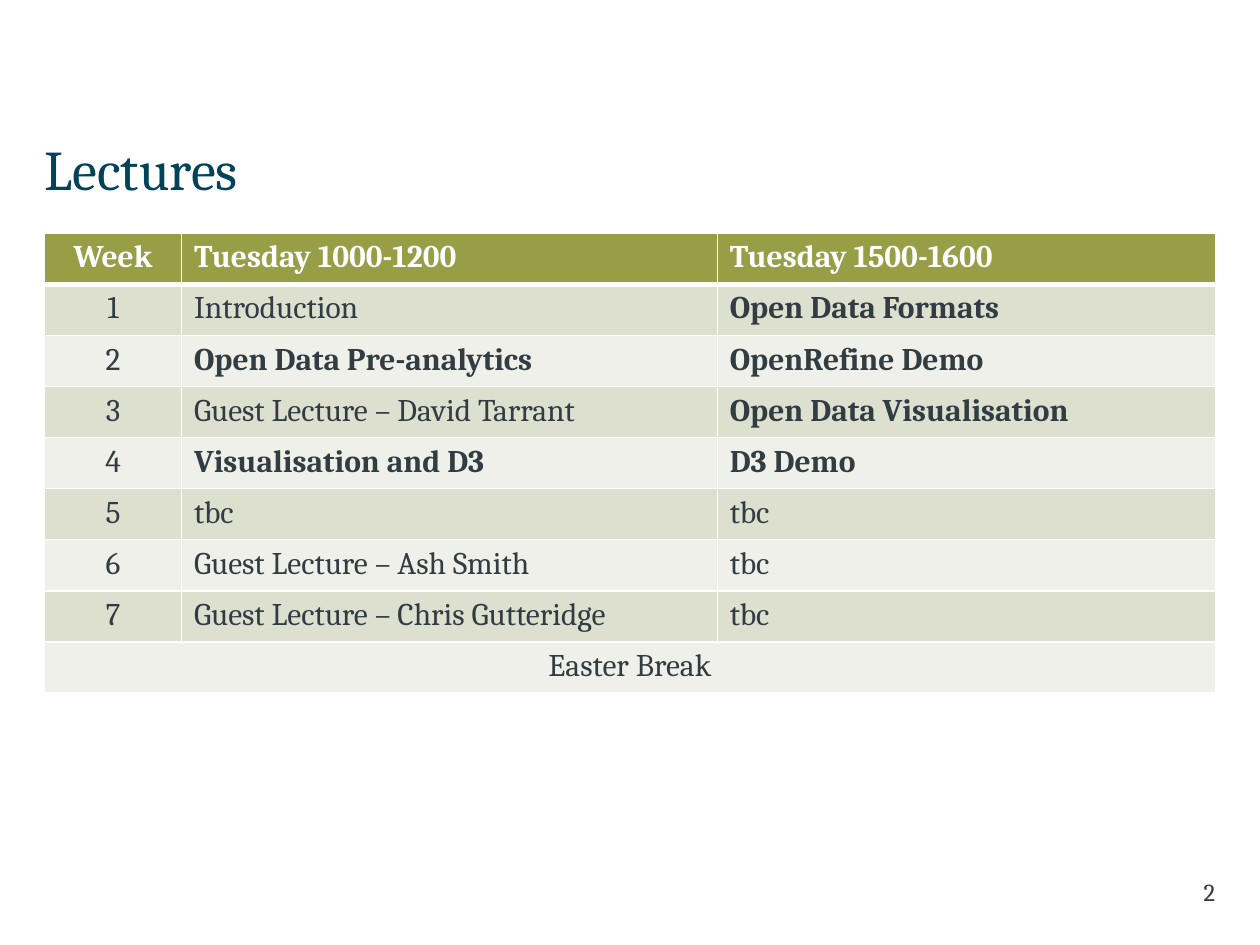
from lxml import etree
from pptx import Presentation
from pptx import util as u
from pptx.dml.color import RGBColor
from pptx.enum import text
from pptx.oxml.ns import qn

TITLE = "Lectures"
PAGE = "2"
HEADER = ("Week", "Tuesday 1000-1200", "Tuesday 1500-1600")
LECTURES = [
    ("Introduction", "Open Data Formats"),
    ("Open Data Pre-analytics", "OpenRefine Demo"),
    ("Guest Lecture – David Tarrant", "Open Data Visualisation"),
    ("Visualisation and D3", "D3 Demo"),
    ("tbc", "tbc"),
    ("Guest Lecture – Ash Smith", "tbc"),
    ("Guest Lecture – Chris Gutteridge", "tbc"),
]
BREAK = "Easter Break"
BOLD = {
    "Open Data Formats", "Open Data Pre-analytics", "OpenRefine Demo",
    "Open Data Visualisation", "Visualisation and D3", "D3 Demo",
}

FONT = "Cambria"
NAVY = RGBColor(0x01, 0x43, 0x59)
SLATE = RGBColor(0x32, 0x3D, 0x43)
WHITE = RGBColor(0xFF, 0xFF, 0xFF)
OLIVE = RGBColor(0x97, 0x9E, 0x45)
BANDS = (RGBColor(0xEF, 0xF0, 0xE9), RGBColor(0xDD, 0xDF, 0xCF))

LEFT, TOP = 0.9, 4.7
COLUMNS = (2.76, 10.8, 10.04)
WIDTH = sum(COLUMNS)
ROW = 1.03
ALIGN = text.PP_ALIGN


def write(tf, words, size=18, color=SLATE, bold=False, align=ALIGN.LEFT):
    p = tf.paragraphs[0]
    p.alignment = align
    r = p.add_run()
    r.text = words
    r.font.name = FONT
    r.font.size = u.Pt(size)
    r.font.bold = bold
    r.font.color.rgb = color


def add_text(s, words, left, top, width, height, inset_left=0, inset_right=0, **style):
    tf = s.shapes.add_textbox(*map(u.Cm, (left, top, width, height))).text_frame
    tf.word_wrap = True
    tf.vertical_anchor = text.MSO_ANCHOR.MIDDLE
    tf.margin_left, tf.margin_right = u.Cm(inset_left), u.Cm(inset_right)
    write(tf, words, **style)


def set_borders(cell, **widths):
    tcPr = cell._tc.get_or_add_tcPr()
    for side in "LRTB":
        ln = etree.SubElement(tcPr, qn(f"a:ln{side}"), w=str(u.Pt(widths.get(side, 1))))
        fill = etree.SubElement(ln, qn("a:solidFill"))
        etree.SubElement(fill, qn("a:srgbClr"), val=str(WHITE))


def add_schedule(s):
    rows = [HEADER]
    rows += [(str(week), *pair) for week, pair in enumerate(LECTURES, 1)]
    rows.append((BREAK, "", ""))
    table = s.shapes.add_table(
        len(rows), len(COLUMNS), u.Cm(LEFT), u.Cm(TOP), u.Cm(WIDTH), u.Cm(ROW * len(rows))
    ).table
    for column, width in zip(table.columns, COLUMNS):
        column.width = u.Cm(width)
    for i, row in enumerate(rows):
        table.rows[i].height = u.Cm(ROW)
        header = i == 0
        for j, words in enumerate(row):
            cell = table.cell(i, j)
            set_borders(cell, B=3 if header else 1, T=3 if i == 1 else 1)
            cell.fill.solid()
            cell.fill.fore_color.rgb = OLIVE if header else BANDS[i % 2]
            if words:
                write(
                    cell.text_frame, words,
                    color=WHITE if header else SLATE,
                    bold=header or words in BOLD,
                    align=ALIGN.LEFT if j else ALIGN.CENTER,
                )
    last = len(rows) - 1
    table.cell(last, 0).merge(table.cell(last, len(COLUMNS) - 1))


def main():
    prs = Presentation()
    prs.slide_width, prs.slide_height = u.Cm(25.4), u.Cm(19.05)
    s = prs.slides.add_slide(prs.slide_layouts[6])
    add_text(s, TITLE, LEFT, 2.49, WIDTH, 1.8, inset_right=0.25, size=32, color=NAVY)
    add_text(s, PAGE, 19.63, 17.55, 4.87, 0.86, inset_left=0.25, size=14, align=ALIGN.RIGHT)
    add_schedule(s)
    prs.save("out.pptx")


if __name__ == "__main__":
    main()
